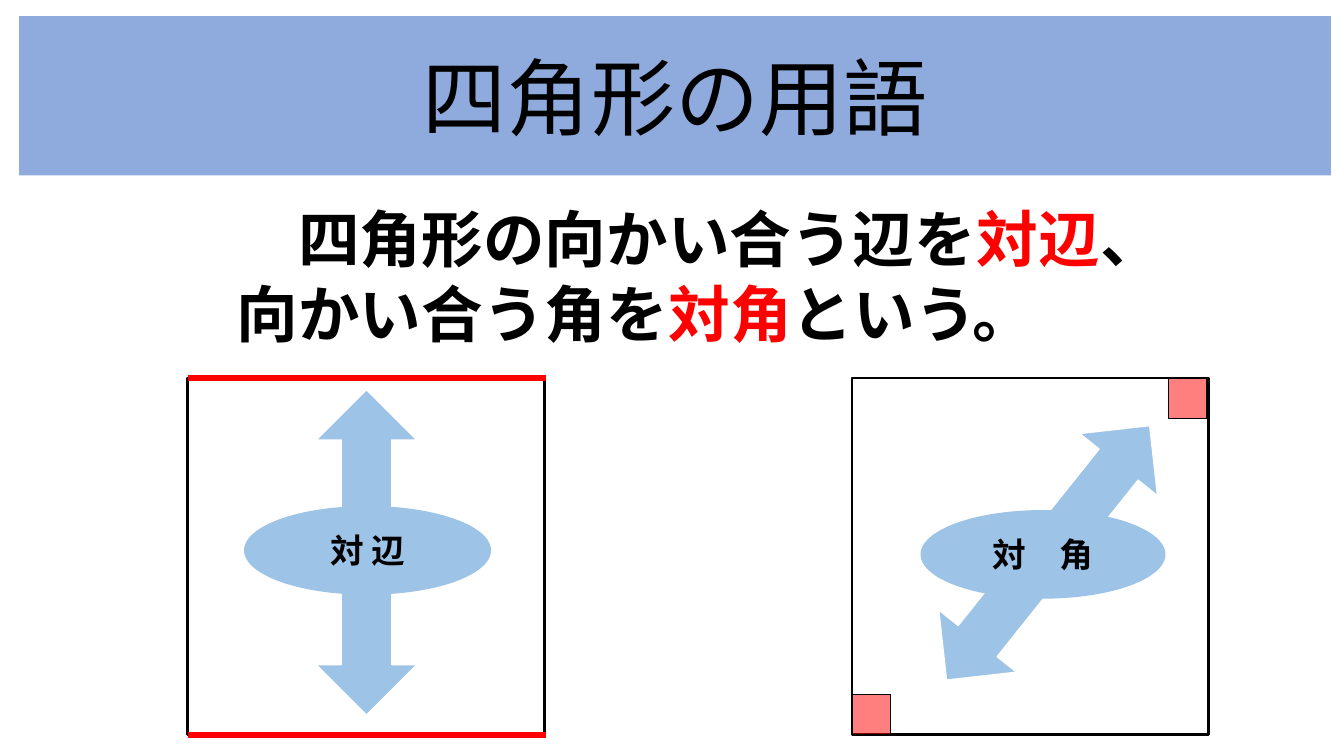
from lxml import etree
from pptx import Presentation
from pptx.dml.color import RGBColor
from pptx.enum.shapes import MSO_CONNECTOR, MSO_SHAPE
from pptx.enum.text import MSO_ANCHOR, MSO_AUTO_SIZE, PP_ALIGN
from pptx.oxml.ns import qn
from pptx.util import Inches, Pt

RECTANGLE = MSO_SHAPE.RECTANGLE
ELLIPSE = MSO_SHAPE.OVAL
DOUBLE_ARROW = MSO_SHAPE.LEFT_RIGHT_ARROW
STRAIGHT = MSO_CONNECTOR.STRAIGHT
MIDDLE = MSO_ANCHOR.MIDDLE
CENTER = PP_ALIGN.CENTER
LEFT = PP_ALIGN.LEFT
NO_AUTOFIT = MSO_AUTO_SIZE.NONE

BLACK, WHITE, RED = "000000", "FFFFFF", "FF0000"
BANNER_BLUE, ARROW_BLUE = "8FAADC", "9DC3E6"
TITLE_FONT, BODY_FONT = "Cambria", "Noto Sans CJK JP"


def color(hex_value):
    return RGBColor.from_string(hex_value)


class SlideBuilder:
    def __init__(self, slide):
        self.slide = slide
        self.shapes = slide.shapes

    def start_group(self):
        self.shapes = self.slide.shapes.add_group_shape().shapes

    def end_group(self):
        self.shapes = self.slide.shapes

    def place(self, shape, box):
        for side, length in zip(("left", "top", "width", "height"), box):
            setattr(shape, side, Inches(length))

    def fill_text(self, shape, lines, size, font=BODY_FONT, bold=True, align=CENTER,
                  spacing=None, **frame_format):
        frame = shape.text_frame
        frame_values = {"vertical_anchor": MIDDLE, "word_wrap": True,
                        "auto_size": NO_AUTOFIT, **frame_format}
        for name, value in frame_values.items():
            setattr(frame, name, value)
        for index, line in enumerate(lines):
            paragraph = frame.add_paragraph() if index else frame.paragraphs[0]
            paragraph.alignment = align
            paragraph.line_spacing = spacing
            for words, ink in line:
                run = paragraph.add_run()
                run.text = words
                for name, value in {"name": font, "size": Pt(size), "bold": bold}.items():
                    setattr(run.font, name, value)
                run.font.color.rgb = color(ink)
                east_asian = etree.SubElement(run.font._element, qn("a:ea"))
                east_asian.set("typeface", BODY_FONT)

    def title(self, words, box, fill):
        banner = self.slide.shapes.title
        self.place(banner, box)
        banner.fill.solid()
        banner.fill.fore_color.rgb = color(fill)
        self.fill_text(banner, [[(words, BLACK)]], 60, TITLE_FONT, False, word_wrap=False)

    def text(self, lines, box, size, **text_format):
        textbox = self.shapes.add_textbox(*map(Inches, box))
        self.fill_text(textbox, lines, size, align=LEFT, **text_format)

    def shape(self, kind, box, fill=None, line=None, width=1, rotation=0, opacity=100):
        shape = self.shapes.add_shape(kind, *map(Inches, box))
        shape.shadow.inherit = False
        shape.rotation = rotation
        for part, ink in ((shape.fill, fill), (shape.line.fill, line)):
            if ink:
                part.solid()
                part.fore_color.rgb = color(ink)
            else:
                part.background()
        if line:
            shape.line.width = Pt(width)
        if opacity < 100:
            tint = shape._element.spPr.find(qn("a:solidFill"))[0]
            etree.SubElement(tint, qn("a:alpha")).set("val", str(opacity * 1000))
        return shape

    def line(self, start, end, ink, width):
        connector = self.shapes.add_connector(STRAIGHT, *map(Inches, start + end))
        connector.line.color.rgb = color(ink)
        connector.line.width = Pt(width)
        etree.SubElement(connector._element.spPr, qn("a:effectLst"))

    def square(self, left, top, side):
        self.shape(RECTANGLE, (left, top, side, side), line=BLACK, width=2)

    def labelled_arrow(self, arrow_box, rotation, label_box, label):
        self.shape(DOUBLE_ARROW, arrow_box, ARROW_BLUE, WHITE, rotation=rotation)
        ellipse = self.shape(ELLIPSE, label_box, ARROW_BLUE)
        self.fill_text(ellipse, [[(label, BLACK)]], 24)


def main():
    presentation = Presentation()
    presentation.slide_width = Inches(13.33)
    presentation.slide_height = Inches(7.5)
    builder = SlideBuilder(presentation.slides.add_slide(presentation.slide_layouts[5]))

    builder.title("四角形の用語", (0.19, 0.16, 13.01, 1.58), BANNER_BLUE)
    definition = [
        [("　四角形の向かい合う辺を", BLACK), ("対辺", RED), ("、", BLACK)],
        [("向かい合う角を", BLACK), ("対角", RED), ("という。", BLACK)],
    ]
    builder.text(definition, (2.25, 1.89, 9.95, 1.58), 44, spacing=Pt(53),
                 margin_top=Inches(0.1), margin_bottom=0)

    top, side = 3.75, 3.54
    sides_left, angles_left = 1.86, 8.45

    builder.start_group()
    builder.square(sides_left, top, side)
    builder.labelled_arrow((2.02, 4.98, 3.23, 1), 90, (2.42, 5.02, 2.45, 0.88), "対 辺")
    for edge in (top, top + side):
        builder.line((sides_left, edge), (5.42, edge), RED, 4)

    builder.start_group()
    builder.square(angles_left, top, side)
    builder.labelled_arrow((8.78, 4.99, 3.23, 0.99), 128.6, (9.13, 5.06, 2.43, 0.88), "対　角")
    builder.end_group()

    mark_width, mark_height = 0.38, 0.4
    for left, mark_top in ((11.59, top), (angles_left, top + side - mark_height)):
        builder.shape(RECTANGLE, (left, mark_top, mark_width, mark_height), RED, BLACK, opacity=50)

    presentation.save("out.pptx")


if __name__ == "__main__":
    main()
